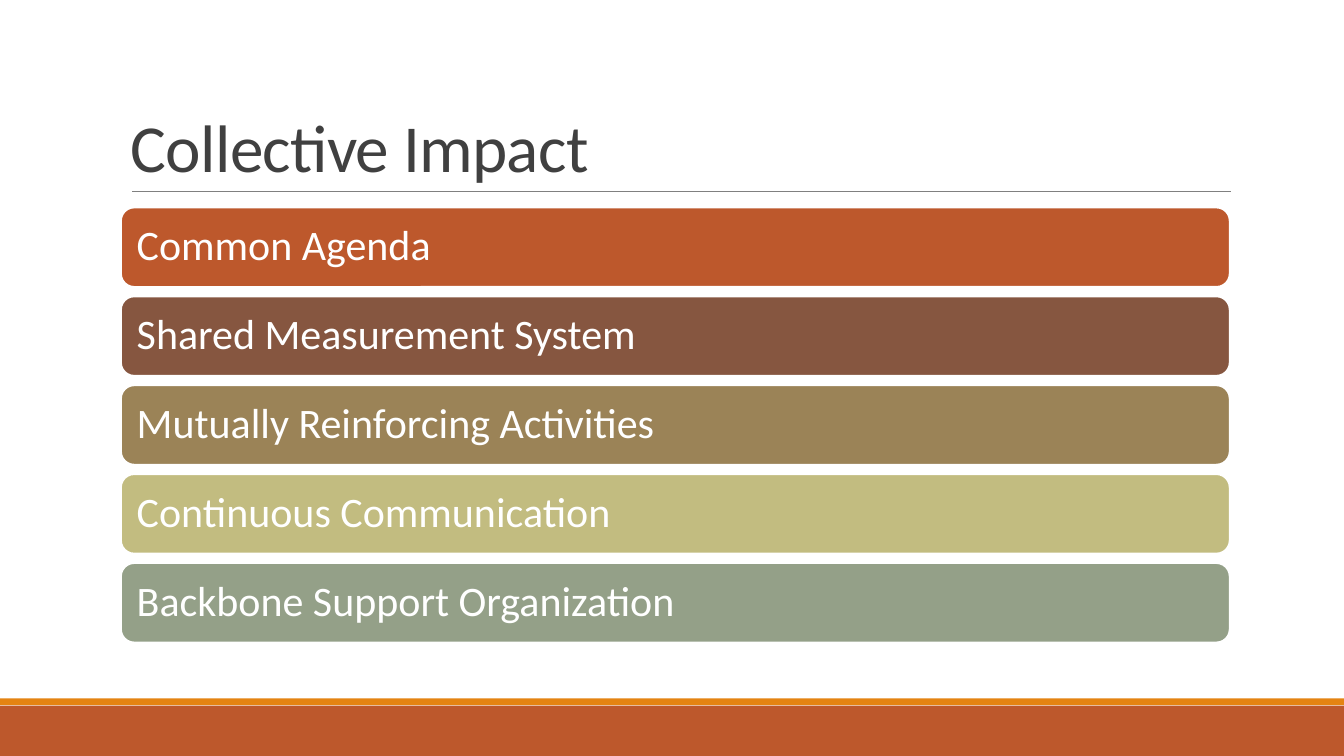
from pptx import Presentation
from pptx.dml.color import RGBColor as Rgb
from pptx.enum.shapes import MSO_CONNECTOR as Link, MSO_SHAPE as Kind
from pptx.enum.text import MSO_ANCHOR as Anchor, PP_ALIGN as Align
from pptx.oxml.ns import qn
from pptx.util import Cm, Pt

HUES = {
    "rust": "BD582C",
    "amber": "E48312",
    "brown": "865640",
    "tan": "9B8357",
    "straw": "C2BC80",
    "sage": "94A088",
    "ink": "404040",
    "grey": "808080",
    "white": "FFFFFF",
}
BARS = [
    ("Common Agenda", "rust"),
    ("Shared Measurement System", "brown"),
    ("Mutually Reinforcing Activities", "tan"),
    ("Continuous Communication", "straw"),
    ("Backbone Support Organization", "sage"),
]
WIDE, HIGH = 33.87, 19.05
LEFT, SPAN = 3.05, 27.94
TOP, STEP, TALL = 5.23, 2.24, 2
PAD = Cm(0.3)
BAR_FRAME = {
    "margin_left": PAD,
    "margin_right": PAD,
    "margin_top": PAD,
    "margin_bottom": PAD,
    "vertical_anchor": Anchor.MIDDLE,
}


def hue(name):
    """Return the named colour."""
    return Rgb.from_string(HUES[name])


def apply(item, form):
    """Set each format value on the item."""
    for key, value in form.items():
        setattr(item, key, value)


def write(shape, text, size, tint, lead, frame):
    """Put one line of styled text in a shape and return its run."""
    body = shape.text_frame
    apply(body, {"word_wrap": True, **frame})
    para = body.paragraphs[0]
    apply(para, {"alignment": Align.LEFT, "line_spacing": lead})
    run = para.add_run()
    run.text = text
    apply(run.font, {"name": "Calibri", "size": Pt(size)})
    run.font.color.rgb = hue(tint)
    return run


def add_box(slide, kind, area, fill):
    """Add a filled shape without outline or shadow."""
    box = slide.shapes.add_shape(kind, *map(Cm, area))
    box.shadow.inherit = False
    box.fill.solid()
    box.fill.fore_color.rgb = hue(fill)
    box.line.fill.background()
    return box


def add_bar(slide, row, text, fill):
    """Add one rounded bar of the list."""
    area = (LEFT, TOP + row * STEP, SPAN, TALL)
    bar = add_box(slide, Kind.ROUNDED_RECTANGLE, area, fill)
    bar.line.color.rgb = hue("white")
    bar.line.width = Pt(1.25)
    write(bar, text, 30, "white", 0.9, BAR_FRAME)


def add_rule(slide, left, right, top):
    """Add the thin line under the title."""
    ends = map(Cm, (left, top, right, top))
    rule = slide.shapes.add_connector(Link.STRAIGHT, *ends)
    rule.line.color.rgb = hue("grey")
    rule.line.width = Pt(0.5)
    props = rule._element.spPr
    props.append(props.makeelement(qn("a:effectLst"), {}))


def add_title(slide, text):
    """Add the slide title."""
    area = map(Cm, (LEFT, 0.79, SPAN, 4.04))
    box = slide.shapes.add_textbox(*area)
    frame = {"vertical_anchor": Anchor.BOTTOM}
    run = write(box, text, 48, "ink", 0.85, frame)
    run.font._element.set("spc", "-50")


def main():
    """Build and save the slide."""
    deck = Presentation()
    apply(deck, {"slide_width": Cm(WIDE), "slide_height": Cm(HIGH)})
    slide = deck.slides.add_slide(deck.slide_layouts[6])
    add_box(slide, Kind.RECTANGLE, (0, 17.78, WIDE, 1.27), "rust")
    add_box(slide, Kind.RECTANGLE, (0, 17.6, WIDE, 0.17), "amber")
    add_rule(slide, 3.33, 31.01, 4.83)
    add_title(slide, "Collective Impact")
    for row, (text, fill) in enumerate(BARS):
        add_bar(slide, row, text, fill)
    deck.save("out.pptx")


if __name__ == "__main__":
    main()
